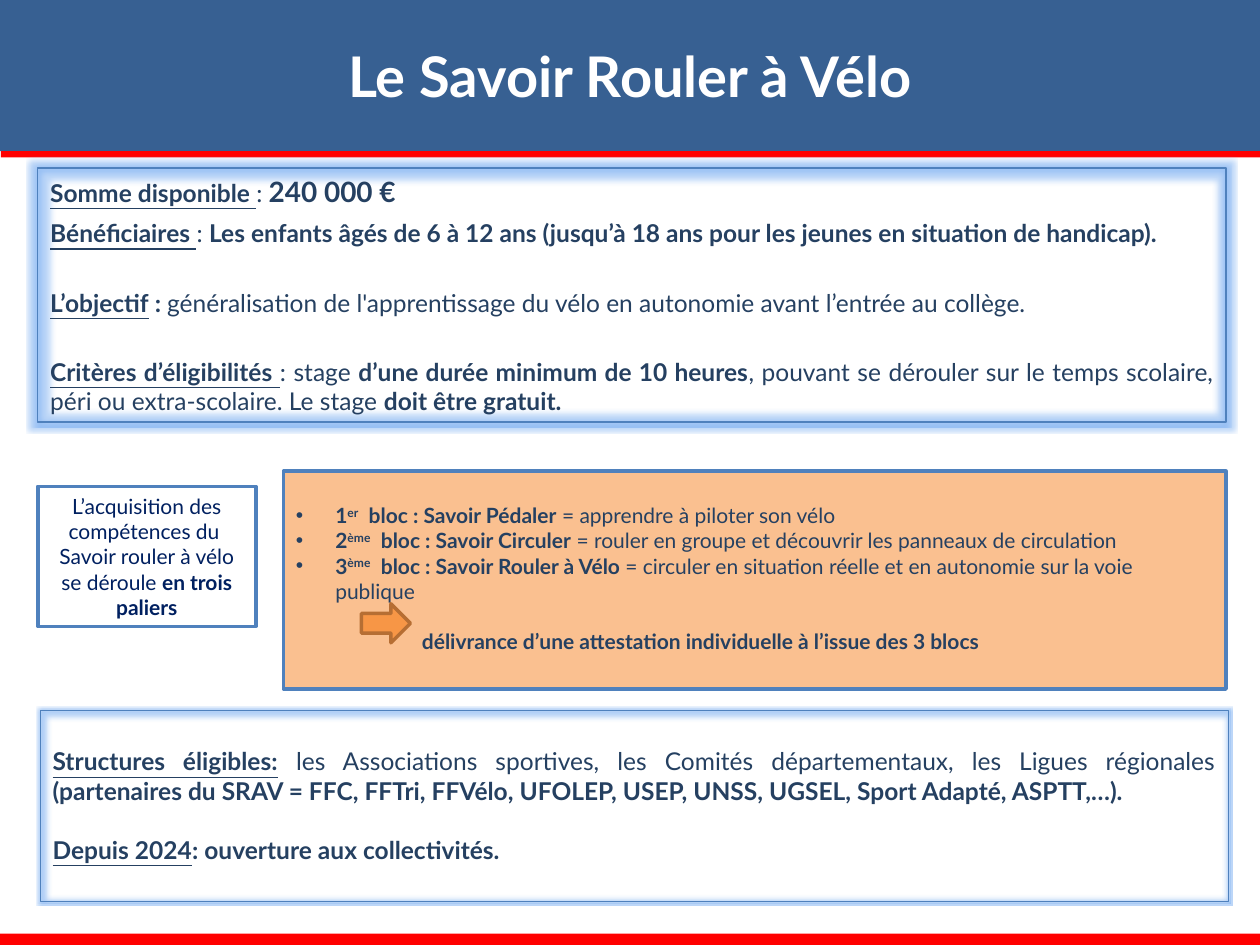
from pptx import Presentation
from pptx.dml.color import RGBColor
from pptx.enum.shapes import MSO_SHAPE
from pptx.enum.text import MSO_ANCHOR, PP_ALIGN
from pptx.oxml import parse_xml
from pptx.oxml.ns import nsdecls, qn
from pptx.util import Pt

FONT = "Lato"
NAVY, BLUE, RED, WHITE = "254061", "4F81BD", "FF0000", "FFFFFF"
LEFT, JUST, MID = PP_ALIGN.LEFT, PP_ALIGN.JUSTIFY, PP_ALIGN.CENTER


def color(code):
    return RGBColor.from_string(code)


def box(slide, x, y, w, h, fill=None, line=None, width=0,
        kind=MSO_SHAPE.RECTANGLE):
    shape = slide.shapes.add_shape(kind, Pt(x), Pt(y), Pt(w), Pt(h))
    shape.shadow.inherit = False
    if fill:
        shape.fill.solid()
        shape.fill.fore_color.rgb = color(fill)
    else:
        shape.fill.background()
    if line:
        shape.line.color.rgb = color(line)
        shape.line.width = Pt(width)
    else:
        shape.line.fill.background()
    return shape


def glow(shape, size):
    effects = shape._element.spPr.find(qn("a:effectLst"))
    effects.append(parse_xml(
        f'<a:glow {nsdecls("a")} rad="{Pt(size)}"><a:srgbClr val="6BA5F0">'
        '<a:alpha val="45000"/></a:srgbClr></a:glow>'))


def frame(shape, anchor=MSO_ANCHOR.TOP, top=3.6):
    text = shape.text_frame
    text.word_wrap = True
    text.vertical_anchor = anchor
    text.margin_left = text.margin_right = Pt(7.2)
    text.margin_top, text.margin_bottom = Pt(top), Pt(3.6)
    return text


def bullet(para):
    props = para._p.get_or_add_pPr()
    props.set("marL", str(Pt(22.5)))
    props.set("indent", str(Pt(-22.5)))
    for xml in (f'<a:buClr {nsdecls("a")}><a:srgbClr val="{NAVY}"/></a:buClr>',
                f'<a:buFont {nsdecls("a")} typeface="Arial"/>',
                f'<a:buChar {nsdecls("a")} char="•"/>'):
        props.append(parse_xml(xml))


def tab(para, pos):
    para._p.get_or_add_pPr().append(parse_xml(
        f'<a:tabLst {nsdecls("a")}><a:tab pos="{Pt(pos)}" algn="l"/>'
        '</a:tabLst>'))


def write(text, paras, size, ink=NAVY):
    """Each para is (align, space before, runs); a run is (words, marks):
    b bold, u underlined, s superscript, l large, * bulleted paragraph."""
    for i, (align, gap, runs) in enumerate(paras):
        para = text.paragraphs[0] if i == 0 else text.add_paragraph()
        para.alignment = align
        para.space_before = Pt(gap)
        if "*" in runs[0][1]:
            bullet(para)
        if runs[0][0].startswith("\t"):
            tab(para, 72)
        for words, marks in runs:
            run = para.add_run()
            run.text = words
            font = run.font
            font.name = FONT
            font.size = Pt(size + 2 if "l" in marks else size)
            font.color.rgb = color(ink)
            font.bold = "b" in marks
            font.underline = "u" in marks
            if "s" in marks:
                font._element.set("baseline", "30000")


def header(slide):
    title = slide.shapes.title
    title.left, title.top, title.width, title.height = 0, 0, Pt(720), Pt(86.4)
    title.fill.solid()
    title.fill.fore_color.rgb = color("376092")
    text = frame(title, MSO_ANCHOR.MIDDLE)
    text.text = "Le Savoir Rouler à Vélo"
    text.paragraphs[0].alignment = MID
    font = text.paragraphs[0].runs[0].font
    font.name, font.size, font.bold = FONT, Pt(32), True
    font.color.rgb = color(WHITE)


def main():
    deck = Presentation()
    deck.slide_width, deck.slide_height = Pt(720), Pt(540)
    slide = deck.slides.add_slide(deck.slide_layouts[5])

    # Title band and red rules
    header(slide)
    box(slide, 0, 533.5, 720, 6.5, RED)
    box(slide, 0.5, 86.4, 719.5, 3.6, RED)

    # Funding, audience and criteria
    scope = box(slide, 21.6, 96, 679, 145.2, line=BLUE)
    glow(scope, 3)
    write(frame(scope), [
        (LEFT, 0, [("Somme disponible ", "bu"), (": ", ""),
                   ("240 000 €", "bl")]),
        (LEFT, 6, [("Bénéficiaires", "bu"), (" ", "u"), (": ", ""),
                   ("Les enfants âgés de 6 à 12 ans (jusqu’à 18 ans pour les "
                    "jeunes en situation de handicap).", "b")]),
        (JUST, 22.8, [("L’objectif", "bu"), (" : ", "b"),
                      ("généralisation de l'apprentissage du vélo en "
                       "autonomie avant l’entrée au collège.", "")]),
        (JUST, 22.8, [("Critères d’éligibilités ", "bu"), (": stage ", ""),
                      ("d’une durée minimum de 10 heures", "b"),
                      (", pouvant se dérouler sur le temps scolaire, péri ou "
                       "extra-scolaire. Le stage ", ""),
                      ("doit être gratuit.", "b")]),
    ], 14)

    # The three blocks
    blocks = [
        ("1", "er", "  bloc : Savoir Pédaler",
         " = apprendre à piloter son vélo"),
        ("2", "ème", "  bloc : Savoir Circuler",
         " = rouler en groupe et découvrir les panneaux de circulation"),
        ("3", "ème", "  bloc : Savoir Rouler à Vélo ",
         "= circuler en situation réelle et en autonomie sur la voie publique"),
    ]
    steps = box(slide, 162, 269.3, 538.6, 124.5, "FAC090", BLUE, 2)
    paras = [(LEFT, 0, [(num, "b*"), (rank, "bs"), (name, "b"), (goal, "")])
             for num, rank, name, goal in blocks]
    paras.append((LEFT, 14.4, [("\tdélivrance d’une attestation individuelle "
                                "à l’issue des 3 blocs", "b")]))
    write(frame(steps, top=18), paras, 12)

    # Lead-in to the blocks
    lead = box(slide, 21.6, 278, 124.6, 80, line=BLUE, width=2)
    write(frame(lead, MSO_ANCHOR.MIDDLE), [
        (MID, 0, [("L’acquisition des compétences du ", "")]),
        (MID, 0, [("Savoir rouler à vélo se déroule ", ""),
                  ("en trois paliers", "b")]),
    ], 12, "002060")

    # Arrow to the certificate
    box(slide, 206.6, 345, 28, 22.3, "F79646", "B66E33", 2,
        MSO_SHAPE.RIGHT_ARROW)

    # Eligible bodies
    bodies = box(slide, 23, 406, 679, 109, line=BLUE)
    glow(bodies, 1)
    write(frame(bodies, top=20.5), [
        (JUST, 0, [("Structures éligibles:", "bu"),
                   (" les Associations sportives, les Comités "
                    "départementaux, les Ligues régionales ", ""),
                   ("(partenaires du SRAV = FFC, FFTri, FFVélo, UFOLEP, USEP, "
                    "UNSS, UGSEL, Sport Adapté, ASPTT,…).", "b")]),
        (JUST, 17, [("Depuis 2024", "bu"),
                    (": ouverture aux collectivités.", "b")]),
    ], 14)

    deck.save("out.pptx")


if __name__ == "__main__":
    main()
